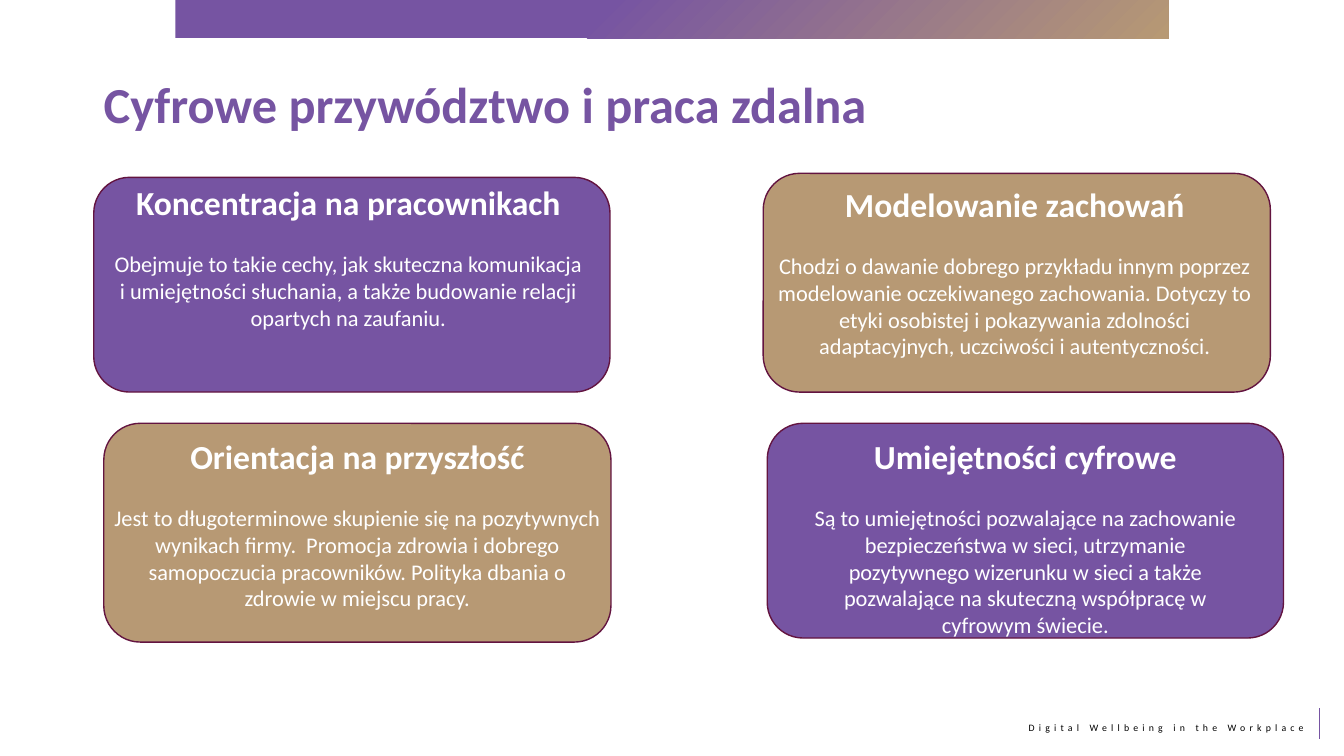
import pptx
import pptx.dml.color
import pptx.enum.shapes
import pptx.enum.text
import pptx.oxml
import pptx.oxml.ns
import pptx.util
from pptx.util import Inches

RGBColor = pptx.dml.color.RGBColor
PURPLE = RGBColor(0x76, 0x54, 0xA2)
GOLD = RGBColor(0xB7, 0x99, 0x74)
MAROON = RGBColor(0x63, 0x14, 0x40)
WHITE = RGBColor(0xFF, 0xFF, 0xFF)
BLACK = RGBColor(0, 0, 0)

SHAPES = pptx.enum.shapes.MSO_SHAPE
ALIGN = pptx.enum.text.PP_ALIGN
AUTO_SIZE = pptx.enum.text.MSO_AUTO_SIZE

TITLE = {"size": pptx.util.Pt(36), "bold": True}
HEADING = {"size": pptx.util.Pt(24), "bold": True}
BODY = {"size": pptx.util.Pt(16), "bold": False}
FOOTER = {"size": pptx.util.Pt(7)}
BODY_GAP = pptx.util.Pt(19.5)

PURPLE_SIZE = (5.12, 2.13)
GOLD_SIZE = (5.03, 2.17)

CARDS = [
    (PURPLE, (0.93, 1.76, *PURPLE_SIZE), (0.99, 1.76, 4.93, 1.58),
     "Koncentracja na pracownikach",
     "Obejmuje to takie cechy, jak skuteczna komunikacja i umiejętności "
     "słuchania, a także budowanie relacji opartych na zaufaniu."),
    (GOLD, (7.57, 1.72, *GOLD_SIZE), (7.61, 1.78, 4.91, 1.85),
     "Modelowanie zachowań",
     "Chodzi o dawanie dobrego przykładu innym poprzez modelowanie "
     "oczekiwanego zachowania. Dotyczy to etyki osobistej i pokazywania "
     "zdolności adaptacyjnych, uczciwości i autentyczności."),
    (PURPLE, (7.61, 4.2, *PURPLE_SIZE), (7.91, 4.28, 4.52, 2.12),
     "Umiejętności cyfrowe",
     "Są to umiejętności pozwalające na zachowanie bezpieczeństwa w sieci, "
     "utrzymanie pozytywnego wizerunku w sieci a także pozwalające na "
     "skuteczną współpracę w cyfrowym świecie."),
    (GOLD, (1.03, 4.2, *GOLD_SIZE), (1.03, 4.28, 5.03, 1.85),
     "Orientacja na przyszłość",
     "Jest to długoterminowe skupienie się na pozytywnych wynikach firmy.  "
     "Promocja zdrowia i dobrego samopoczucia pracowników. Polityka dbania "
     "o zdrowie w miejscu pracy."),
]


def lengths(values):
    return [Inches(value) for value in values]


def write(para, text, formats, color, align):
    para.alignment = align
    span = para.add_run()
    span.text = text
    for name, value in {"name": "Calibri", **formats}.items():
        setattr(span.font, name, value)
    span.font.color.rgb = color
    return span


def add_text_frame(page, place, auto_size):
    frame = page.shapes.add_textbox(*lengths(place)).text_frame
    frame.word_wrap = True
    frame.auto_size = auto_size
    return frame


def add_block(page, kind, place):
    block = page.shapes.add_shape(kind, *lengths(place))
    block.shadow.inherit = False
    return block


def add_banner(page):
    banner = add_block(page, SHAPES.RECTANGLE, (1.74, 0, 9.85, 0.38))
    banner.line.fill.background()
    banner.fill.gradient()
    stops = banner.fill.gradient_stops
    for stop, color, position in zip(stops, (GOLD, PURPLE), (0, 0.58)):
        stop.color.rgb = color
        stop.position = position
    direction = banner.element.spPr.find(".//" + pptx.oxml.ns.qn("a:lin"))
    radial = pptx.oxml.parse_xml(
        f'<a:path {pptx.oxml.ns.nsdecls("a")} path="circle">'
        '<a:fillToRect l="100000" t="100000"/></a:path>')
    direction.getparent().replace(direction, radial)


def add_title(page):
    frame = add_text_frame(page, (0.93, 0.68, 11.46, 0.88), AUTO_SIZE.NONE)
    write(frame.paragraphs[0], "Cyfrowe przywództwo i praca zdalna",
          TITLE, PURPLE, ALIGN.LEFT)


def add_card(page, color, place, text_place, heading, body):
    card = add_block(page, SHAPES.ROUNDED_RECTANGLE, place)
    card.fill.solid()
    card.fill.fore_color.rgb = color
    card.line.color.rgb = MAROON
    card.line.width = pptx.util.Pt(1)
    frame = add_text_frame(page, text_place, AUTO_SIZE.SHAPE_TO_FIT_TEXT)
    write(frame.paragraphs[0], heading, HEADING, WHITE, ALIGN.CENTER)
    para = frame.add_paragraph()
    para.space_before = BODY_GAP
    write(para, body, BODY, WHITE, ALIGN.CENTER)


def add_footer(page):
    frame = add_text_frame(page, (9.68, 7.11, 3.35, 0.22),
                           AUTO_SIZE.SHAPE_TO_FIT_TEXT)
    span = write(frame.paragraphs[0], "Digital Wellbeing in the Workplace",
                 FOOTER, BLACK, ALIGN.RIGHT)
    span.font._element.set("spc", "300")
    rule = page.shapes.add_connector(
        pptx.enum.shapes.MSO_CONNECTOR.STRAIGHT,
        *lengths((13.09, 7.33, 13.09, 7.02)))
    rule.line.color.rgb = PURPLE
    rule.line.width = pptx.util.Pt(0.75)
    rule.element.spPr.append(pptx.oxml.parse_xml(
        f'<a:effectLst {pptx.oxml.ns.nsdecls("a")}/>'))


def main():
    deck = pptx.Presentation()
    deck.slide_width, deck.slide_height = lengths((13.33, 7.5))
    page = deck.slides.add_slide(deck.slide_layouts[6])
    add_footer(page)
    add_banner(page)
    add_title(page)
    for card in CARDS:
        add_card(page, *card)
    deck.save("out.pptx")


if __name__ == "__main__":
    main()
